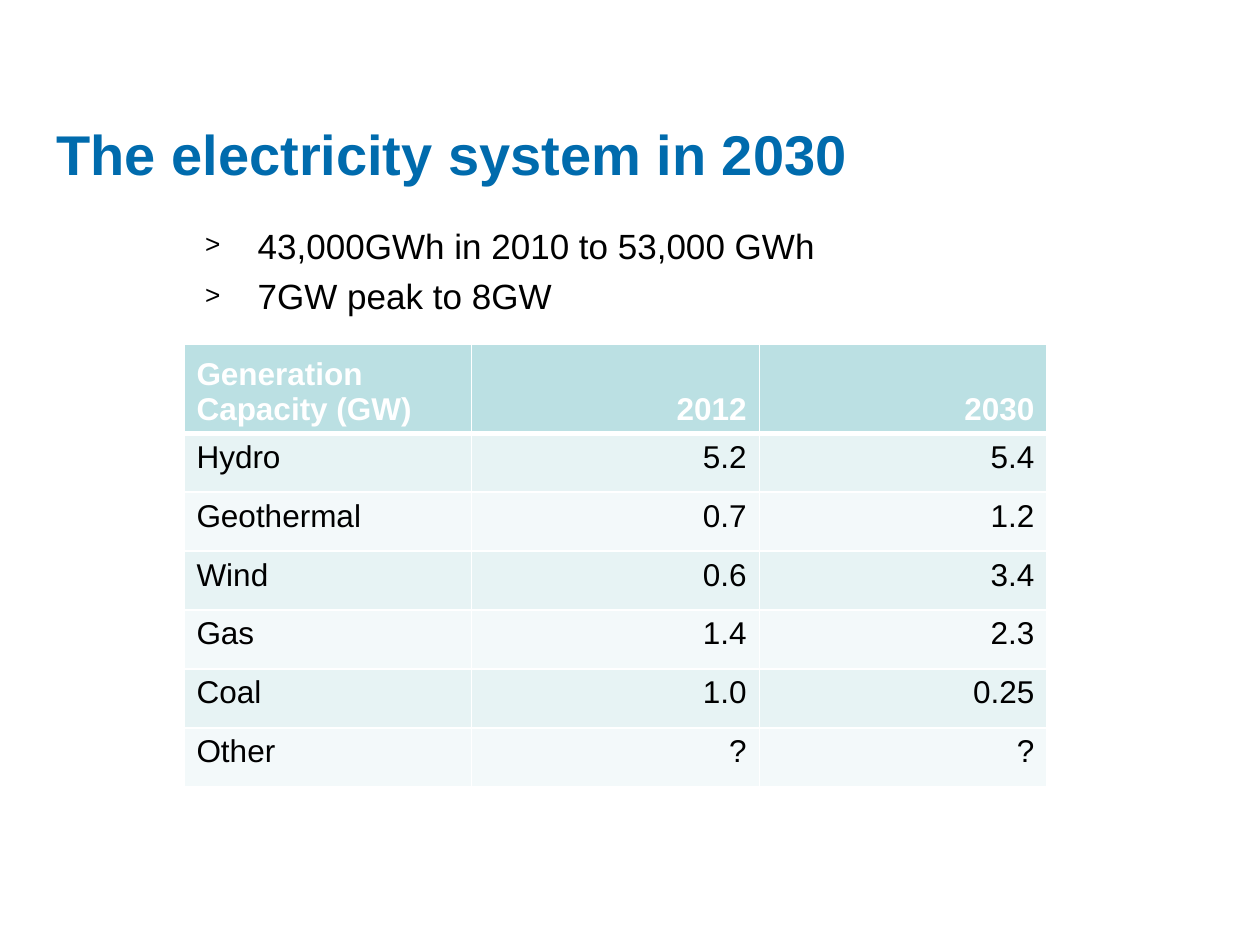
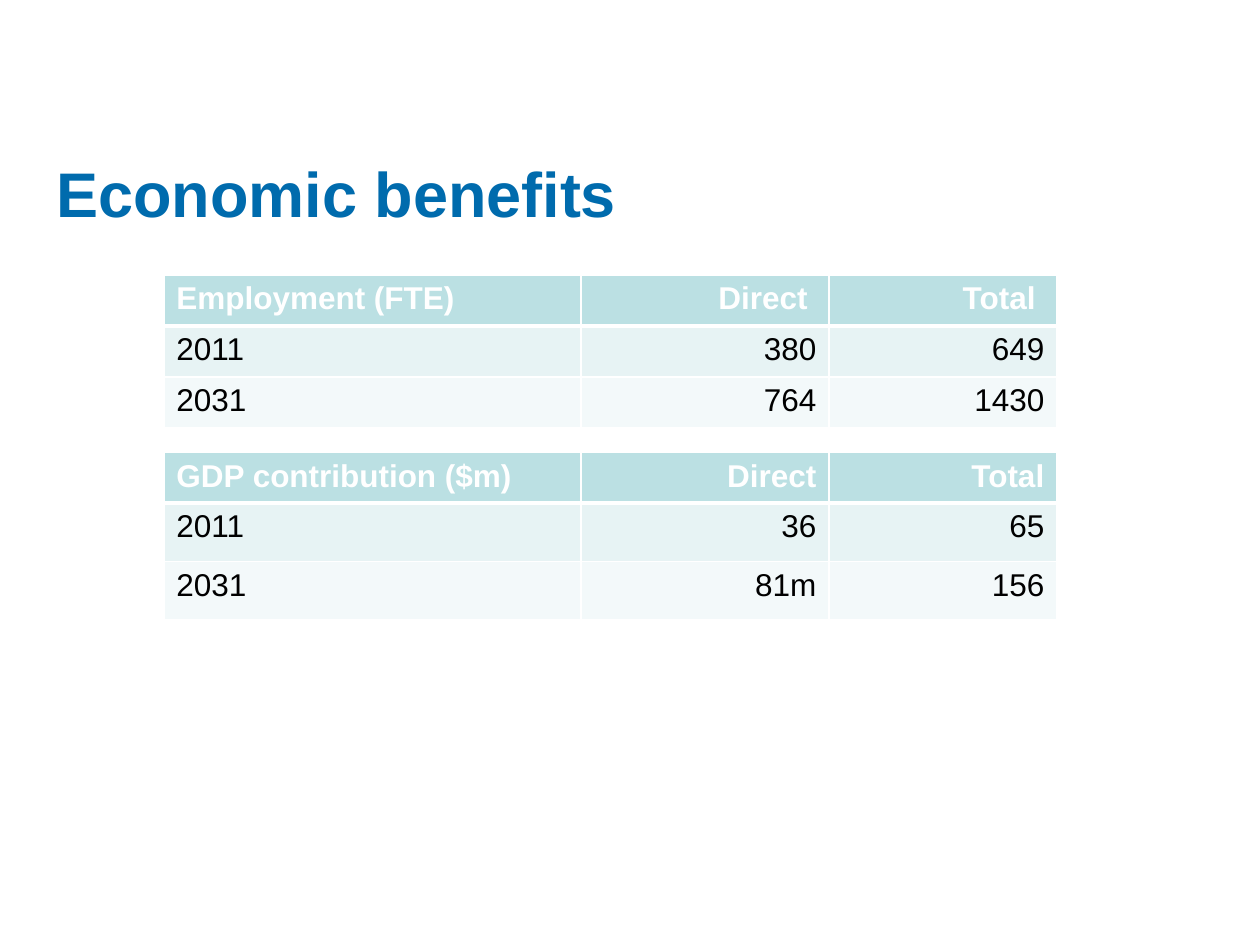
from dataclasses import dataclass

from lxml.etree import SubElement
from pptx import Presentation
from pptx.dml.color import RGBColor
from pptx.enum.text import MSO_ANCHOR, PP_ALIGN
from pptx.oxml import parse_xml
from pptx.oxml.ns import nsdecls, qn
from pptx.slide import Slide
from pptx.table import _Cell
from pptx.util import Pt

FONT = "Arial"
TITLE_BLUE = RGBColor(0x00, 0x6B, 0xAD)
HEADER_TEAL = RGBColor(0xBB, 0xE0, 0xE3)
BAND_DARK = RGBColor(0xE7, 0xF3, 0xF4)
BAND_LIGHT = RGBColor(0xF3, 0xF9, 0xFA)
WHITE = RGBColor(0xFF, 0xFF, 0xFF)
BLACK = RGBColor(0x00, 0x00, 0x00)

TITLE_LEFT, TITLE_HEIGHT = Pt(25.2), Pt(54)
THIN_RULE, HEADER_RULE = Pt(1), Pt(3)
BULLET_INDENT = Pt(30)


@dataclass(frozen=True)
class Title:
    text: str
    top: float
    width: float
    size: float


@dataclass(frozen=True)
class DataTable:
    left: float
    top: float
    column_widths: tuple[float, ...]
    header_height: float
    row_height: float
    rows: tuple[tuple[str, ...], ...]
    header_anchor: MSO_ANCHOR = MSO_ANCHOR.TOP


BENEFIT_COLUMNS = (238.3, 141.8, 130.3)

CAPACITY = DataTable(
    105.1, 196.6, (164.4,) * 3, 51, 33.7,
    (
        ("Generation Capacity (GW)", "2012", "2030"),
        ("Hydro", "5.2", "5.4"),
        ("Geothermal", "0.7", "1.2"),
        ("Wind", "0.6", "3.4"),
        ("Gas", "1.4", "2.3"),
        ("Coal", "1.0", "0.25"),
        ("Other", "?", "?"),
    ),
    MSO_ANCHOR.BOTTOM,
)
EMPLOYMENT = DataTable(
    93.6, 157, BENEFIT_COLUMNS, 29.2, 29.2,
    (
        ("Employment (FTE)", "Direct ", "Total "),
        ("2011", "380", "649"),
        ("2031", "764", "1430"),
    ),
)
GDP = DataTable(
    93.6, 258.6, BENEFIT_COLUMNS, 28, 33.3,
    (
        ("GDP contribution ($m)", "Direct", "Total"),
        ("2011", "36", "65"),
        ("2031", "81m", "156"),
    ),
)
DEMAND = ("43,000GWh in 2010 to 53,000 GWh", "7GW peak to 8GW")


def add_title(slide: Slide, title: Title) -> None:
    box = slide.shapes.add_textbox(TITLE_LEFT, Pt(title.top), Pt(title.width), TITLE_HEIGHT)
    frame = box.text_frame
    frame.word_wrap = True
    frame.vertical_anchor = MSO_ANCHOR.MIDDLE
    frame.text = title.text
    font = frame.paragraphs[0].runs[0].font
    font.name, font.size, font.bold = FONT, Pt(title.size), True
    font.color.rgb = TITLE_BLUE


def add_bullets(slide: Slide, lines: tuple[str, ...]) -> None:
    box = slide.shapes.add_textbox(Pt(110.2), Pt(124.5), Pt(487.4), Pt(77))
    frame = box.text_frame
    frame.word_wrap = True
    frame.text = "\n".join(lines)
    for index, paragraph in enumerate(frame.paragraphs):
        properties = paragraph._p.get_or_add_pPr()
        properties.set("marL", str(BULLET_INDENT))
        properties.set("indent", str(-BULLET_INDENT))
        bullet_color = SubElement(properties, qn("a:buClr"))
        SubElement(bullet_color, qn("a:srgbClr"), val=str(BLACK))
        SubElement(properties, qn("a:buSzPct"), val="75000")
        SubElement(properties, qn("a:buFont"), typeface=FONT)
        SubElement(properties, qn("a:buChar"), char=">")
        if index:
            paragraph.space_before = Pt(5)
        font = paragraph.runs[0].font
        font.name, font.size = FONT, Pt(20)
        font.color.rgb = BLACK


def rule_cell(cell: _Cell, top: int, bottom: int) -> None:
    properties = cell._tc.get_or_add_tcPr()
    widths = {"lnL": THIN_RULE, "lnR": THIN_RULE, "lnT": top, "lnB": bottom}
    for position, (side, width) in enumerate(widths.items()):
        properties.insert(position, parse_xml(
            f'<a:{side} {nsdecls("a")} w="{width}"><a:solidFill>'
            f'<a:srgbClr val="{WHITE}"/></a:solidFill></a:{side}>'
        ))


def fill_cell(cell: _Cell, text: str, row: int, column: int, anchor: MSO_ANCHOR) -> None:
    is_header = row == 0
    cell.fill.solid()
    band = BAND_DARK if row % 2 else BAND_LIGHT
    cell.fill.fore_color.rgb = HEADER_TEAL if is_header else band
    rule_cell(
        cell,
        HEADER_RULE if row == 1 else THIN_RULE,
        HEADER_RULE if is_header else THIN_RULE,
    )
    cell.vertical_anchor = anchor if is_header else MSO_ANCHOR.TOP
    cell.text_frame.text = text
    paragraph = cell.text_frame.paragraphs[0]
    paragraph.alignment = PP_ALIGN.RIGHT if column else PP_ALIGN.LEFT
    font = paragraph.runs[0].font
    font.name, font.size, font.bold = FONT, Pt(18), is_header
    font.color.rgb = WHITE if is_header else BLACK


def add_data_table(slide: Slide, data: DataTable) -> None:
    heights = [data.header_height] + [data.row_height] * (len(data.rows) - 1)
    table = slide.shapes.add_table(
        len(data.rows), len(data.column_widths), Pt(data.left), Pt(data.top),
        Pt(sum(data.column_widths)), Pt(sum(heights)),
    ).table
    table.horz_banding = False
    for column, width in zip(table.columns, data.column_widths):
        column.width = Pt(width)
    for row_index, (height, values) in enumerate(zip(heights, data.rows)):
        table.rows[row_index].height = Pt(height)
        for column_index, value in enumerate(values):
            cell = table.cell(row_index, column_index)
            fill_cell(cell, value, row_index, column_index, data.header_anchor)


def main() -> None:
    presentation = Presentation()
    presentation.slide_width, presentation.slide_height = Pt(720), Pt(540)
    blank = presentation.slide_layouts[6]

    electricity = presentation.slides.add_slide(blank)
    add_title(electricity, Title("The electricity system in 2030", 60.5, 576, 32))
    add_bullets(electricity, DEMAND)
    add_data_table(electricity, CAPACITY)

    benefits = presentation.slides.add_slide(blank)
    add_title(benefits, Title("Economic benefits", 82.8, 345.6, 36))
    for data in (EMPLOYMENT, GDP):
        add_data_table(benefits, data)

    presentation.save("out.pptx")


if __name__ == "__main__":
    main()
